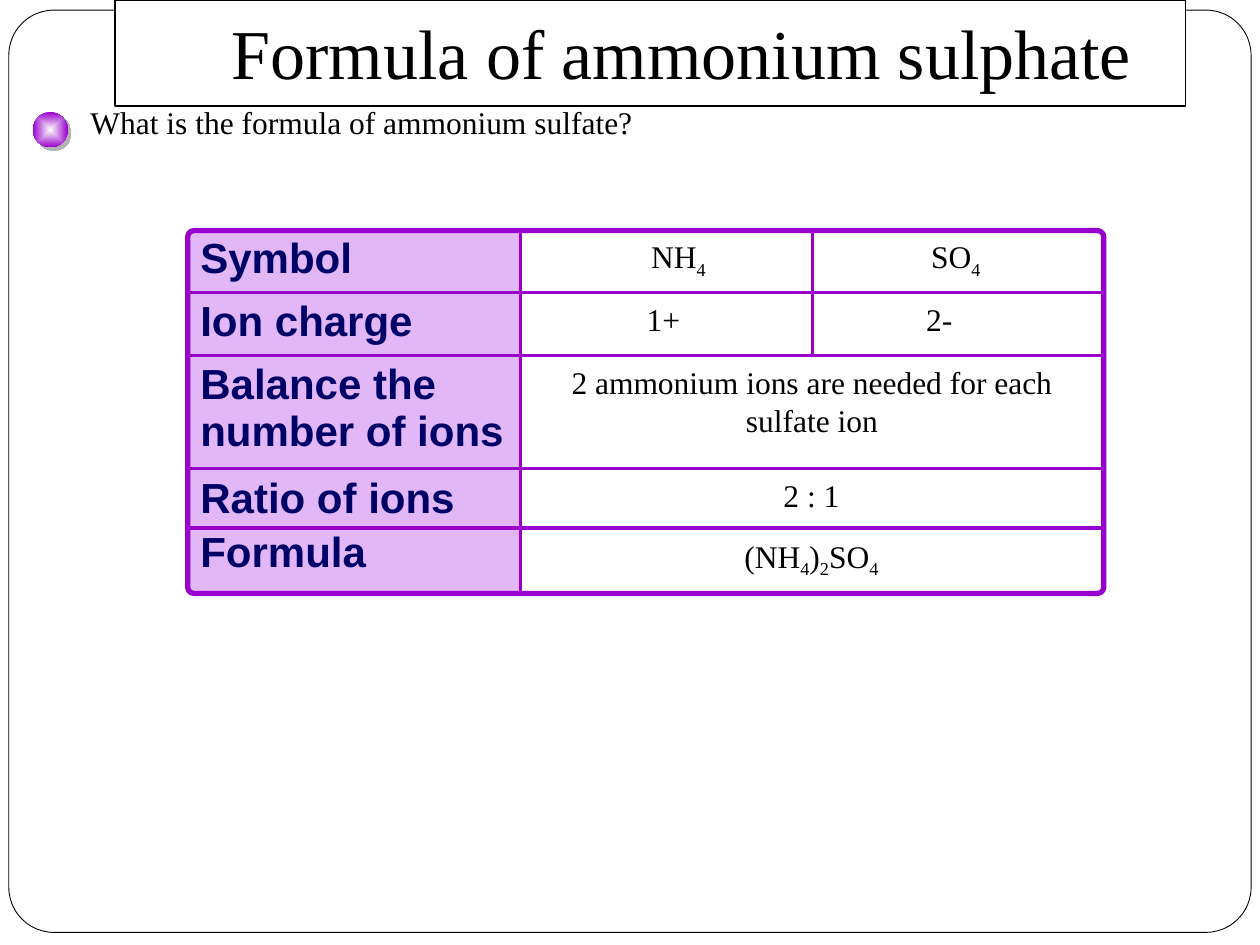
from typing import NamedTuple, Optional

from pptx import Presentation
from pptx.dml.color import RGBColor
from pptx.enum.shapes import MSO_CONNECTOR as Connector, MSO_SHAPE as Shape
from pptx.enum.text import MSO_ANCHOR as Anchor, MSO_AUTO_SIZE as AutoSize, PP_ALIGN as Align
from pptx.oxml import parse_xml
from pptx.oxml.ns import nsdecls, qn
from pptx.util import Inches, Pt

BLACK, WHITE = "000000", "FFFFFF"
PURPLE, LILAC, NAVY, GREY = "9900CC", "E1B7F7", "010066", "B2B2B2"
SERIF, SANS = "Times New Roman", "Arial"
NO_TABLE_STYLE = "{2D5ABB26-0587-4C30-8999-92F81FD0307C}"

LEFT, LABEL_EDGE, ION_EDGE, RIGHT = 1.49, 4.13, 6.45, 8.76
TOP, BOTTOM = 1.83, 4.71
ROW_EDGES = [2.32, 2.82, 3.72, 4.19]


class Box(NamedTuple):
    left: float
    top: float
    width: float
    height: float

    def lengths(self) -> list:
        return [Inches(value) for value in self]


class Entry(NamedTuple):
    text: str
    box: Box
    align: Align = Align.CENTER


LABELS = [["Symbol"], ["Ion charge"], ["Balance the number of ions"], ["Ratio of ions", "Formula"]]
LABEL_HEIGHTS = [0.5, 0.5, 0.9, 0.98]
ENTRIES = [
    Entry("What is the formula of ammonium sulfate?", Box(0.62, 0.77, 7.84, 0.5), Align.LEFT),
    Entry("NH|4|", Box(4.93, 1.83, 0.91, 0.5)),
    Entry("SO|4|", Box(7.06, 1.83, 1.05, 0.5)),
    Entry("1+", Box(4.89, 2.33, 0.75, 0.5)),
    Entry("2-", Box(7.08, 2.33, 0.75, 0.5)),
    Entry("2 ammonium ions are needed for each sulfate ion", Box(4.31, 2.83, 4.27, 0.9)),
    Entry("2 : 1", Box(5.89, 3.73, 1.1, 0.5)),
    Entry("(NH|4|)|2|SO|4|", Box(5.49, 4.21, 1.9, 0.5)),
]


def color(value: str) -> RGBColor:
    return RGBColor.from_string(value)


def write(paragraph, text: str, *, size: float = 18, font: str = SERIF, ink: str = BLACK,
          bold: bool = False, align: Align = Align.LEFT, before: float = 0) -> None:
    paragraph.alignment = align
    paragraph.space_before = Pt(before)
    for index, part in enumerate(text.split("|")):
        if not part:
            continue
        run = paragraph.add_run()
        run.text = part
        run.font.size = Pt(size)
        run.font.name = font
        run.font.bold = bold
        run.font.color.rgb = color(ink)
        if index % 2:
            run.font._element.set("baseline", "-25000")


def add_shape(shapes, kind: Shape, box: Box, *, fill: Optional[str] = None,
              line: Optional[str] = None, weight: float = 1, corner: Optional[float] = None):
    shape = shapes.add_shape(kind, *box.lengths())
    shape.shadow.inherit = False
    if fill:
        shape.fill.solid()
        shape.fill.fore_color.rgb = color(fill)
    else:
        shape.fill.background()
    if line:
        shape.line.color.rgb = color(line)
        shape.line.width = Pt(weight)
    else:
        shape.line.fill.background()
    if corner is not None:
        shape.adjustments[0] = corner
    return shape


def add_rule(shapes, x1: float, y1: float, x2: float, y2: float) -> None:
    rule = shapes.add_connector(Connector.STRAIGHT, *(Inches(v) for v in (x1, y1, x2, y2)))
    rule.line.color.rgb = color(PURPLE)
    rule.line.width = Pt(2)
    rule._element.spPr.append(parse_xml(f"<a:effectLst {nsdecls('a')}/>"))


def add_grid(slide) -> None:
    shapes = slide.shapes.add_group_shape().shapes
    height = BOTTOM - TOP
    add_shape(shapes, Shape.RECTANGLE, Box(LEFT, TOP, LABEL_EDGE - LEFT, height), fill=LILAC)
    add_shape(shapes, Shape.ROUNDED_RECTANGLE, Box(LEFT, TOP, RIGHT - LEFT, height),
              line=PURPLE, weight=3, corner=0.017)
    for edge in ROW_EDGES:
        add_rule(shapes, LEFT, edge, RIGHT, edge)
    add_rule(shapes, LABEL_EDGE, TOP, LABEL_EDGE, BOTTOM)
    add_rule(shapes, ION_EDGE, TOP, ION_EDGE, ROW_EDGES[1])


def add_title(slide, text: str) -> None:
    title = slide.shapes.title
    slide.shapes._spTree.append(title._element)
    title.left, title.top, title.width, title.height = Box(0.91, 0, 8.5, 0.84).lengths()
    title.fill.solid()
    title.fill.fore_color.rgb = color(WHITE)
    title.line.color.rgb = color(BLACK)
    title.line.width = Pt(1)
    frame = title.text_frame
    frame.auto_size = AutoSize.NONE
    frame.vertical_anchor = Anchor.BOTTOM
    frame.margin_left, frame.margin_bottom = Inches(0.93), Inches(0.1)
    write(frame.paragraphs[0], text, size=40)


def add_bullet(slide) -> None:
    bullet = add_shape(slide.shapes, Shape.OVAL, Box(0.26, 0.89, 0.28, 0.28))
    properties = bullet._element.spPr
    properties.replace(properties.find(qn("a:noFill")), parse_xml(
        f'<a:gradFill {nsdecls("a")}><a:gsLst>'
        f'<a:gs pos="0"><a:srgbClr val="{WHITE}"/></a:gs>'
        f'<a:gs pos="100000"><a:srgbClr val="{PURPLE}"/></a:gs></a:gsLst>'
        '<a:path path="shape"><a:fillToRect l="50000" t="50000" r="50000" b="50000"/></a:path>'
        '</a:gradFill>'))
    properties.find(qn("a:effectLst")).append(parse_xml(
        f'<a:outerShdw {nsdecls("a")} blurRad="0" dist="{Pt(2.8)}" dir="2700000">'
        f'<a:srgbClr val="{GREY}"/></a:outerShdw>'))


def add_entry(slide, entry: Entry) -> None:
    frame = slide.shapes.add_textbox(*entry.box.lengths()).text_frame
    frame.word_wrap = True
    write(frame.paragraphs[0], entry.text, align=entry.align)


def add_labels(slide) -> None:
    box = Box(LEFT, TOP - 0.01, LABEL_EDGE - LEFT, sum(LABEL_HEIGHTS))
    table = slide.shapes.add_table(len(LABELS), 1, *box.lengths()).table
    table.first_row = table.horz_banding = False
    table._tbl.tblPr.find(qn("a:tableStyleId")).text = NO_TABLE_STYLE
    for row, height, lines in zip(table.rows, LABEL_HEIGHTS, LABELS):
        row.height = Inches(height)
        cell = row.cells[0]
        cell.fill.background()
        for index, text in enumerate(lines):
            frame = cell.text_frame
            paragraph = frame.add_paragraph() if index else frame.paragraphs[0]
            write(paragraph, text, size=24, font=SANS, ink=NAVY, bold=True,
                  before=4 if index else 0)


def main() -> None:
    presentation = Presentation()
    presentation.slide_width, presentation.slide_height = Inches(10), Inches(7.5)
    slide = presentation.slides.add_slide(presentation.slide_layouts[5])
    add_shape(slide.shapes, Shape.ROUNDED_RECTANGLE, Box(0.07, 0.08, 9.86, 7.32),
              fill=WHITE, line=BLACK, weight=0.5, corner=0.049)
    add_grid(slide)
    add_title(slide, "Formula of ammonium sulphate")
    add_bullet(slide)
    for entry in ENTRIES:
        add_entry(slide, entry)
    add_labels(slide)
    presentation.save("out.pptx")


if __name__ == "__main__":
    main()
